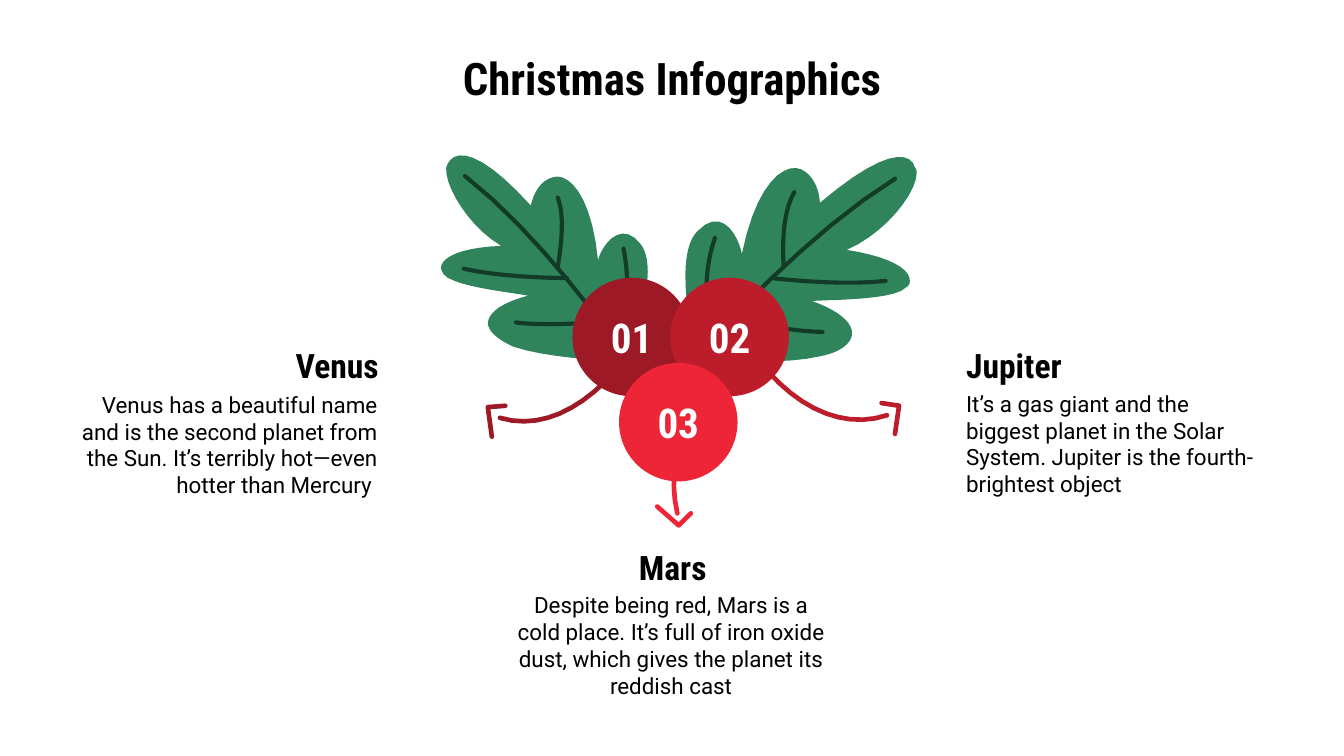
from dataclasses import dataclass

from lxml.etree import SubElement
from pptx import Presentation
from pptx.dml.color import RGBColor
from pptx.enum.shapes import MSO_SHAPE as Preset
from pptx.enum.text import MSO_ANCHOR as Anchor, MSO_AUTO_SIZE as AutoSize, PP_ALIGN as Align
from pptx.oxml.ns import qn
from pptx.util import Cm, Pt

COLORS = {
    "leaf": "2F845C", "vein": "133C28", "text": "000000", "number": "FFFFFF",
    "venus": "9D1926", "jupiter": "BD1D2A", "mars": "EE2537",
}
HEADING_FONT, BODY_FONT = "Roboto Condensed", "Roboto"
CM_PER_INCH = 2.54
BERRY_SIZE = 2.24
CURVE_STEPS = 10

Point = tuple[float, float]
Path = tuple[Point, ...]


@dataclass
class Leaf:
    outline: Path
    veins: tuple[Path, ...]


@dataclass
class Planet:
    name: str
    description: str
    number: str
    color: str
    align: Align
    heading_at: Point
    description_at: Point
    berry_at: Point
    arrow_shaft: Path
    arrow_head: Path


RIGHT_LEAF = Leaf(
    outline=(
        (6.82, 1.29), (6.82, 1.27), (6.82, 1.26), (6.81, 1.25),
        (6.77, 1.11), (6.56, 1.12), (6.1, 1.51),
        (6.1, 1.45), (6.07, 1.31), (5.96, 1.26),
        (5.84, 1.21), (5.63, 1.35), (5.52, 1.89),
        (5.51, 1.81), (5.39, 1.51), (5.19, 1.72),
        (5.12, 1.79), (5.1, 1.92), (5.1, 2.06),
        (5.1, 2.34), (5.18, 2.67), (5.18, 2.67),
        (5.18, 2.67), (5.78, 2.73), (6.11, 2.65),
        (6.26, 2.62), (6.34, 2.55), (6.34, 2.48),
        (6.34, 2.4), (6.24, 2.31), (6.04, 2.24),
        (6.23, 2.23), (6.66, 2.23), (6.74, 2.14),
        (6.76, 2.13), (6.77, 2.11), (6.77, 2.09),
        (6.77, 2), (6.62, 1.91), (6.3, 1.86),
        (6.58, 1.74), (6.82, 1.44), (6.82, 1.29),
    ),
    veins=(
        ((6.66, 1.33), (5.87, 1.82), (5.02, 2.83), (5.02, 2.84)),
        ((5.91, 1.43), (5.83, 1.57), (5.82, 1.78), (5.83, 1.98)),
        ((6.59, 2.09), (6.25, 2.13), (5.75, 2.07), (5.75, 2.07)),
        ((5.32, 1.77), (5.23, 2.03), (5.24, 2.31), (5.33, 2.49)),
        ((6.12, 2.47), (5.9, 2.47), (5.44, 2.38), (5.43, 2.38)),
    ),
)
LEFT_LEAF = Leaf(
    outline=(
        (3.32, 1.25), (3.31, 1.39), (3.49, 1.69), (3.73, 1.83),
        (3.44, 1.84), (3.29, 1.91), (3.28, 1.99),
        (3.28, 2), (3.29, 2.02), (3.3, 2.04),
        (3.37, 2.13), (3.76, 2.17), (3.93, 2.2),
        (3.74, 2.25), (3.64, 2.32), (3.63, 2.4),
        (3.63, 2.46), (3.69, 2.52), (3.82, 2.58),
        (4.12, 2.68), (4.67, 2.69), (4.67, 2.69),
        (4.67, 2.69), (4.79, 2.39), (4.81, 2.14),
        (4.83, 2.01), (4.82, 1.89), (4.77, 1.82),
        (4.61, 1.61), (4.46, 1.86), (4.45, 1.94),
        (4.4, 1.43), (4.22, 1.28), (4.11, 1.32),
        (4, 1.35), (3.96, 1.48), (3.95, 1.53),
        (3.58, 1.12), (3.39, 1.1), (3.33, 1.22),
        (3.33, 1.23), (3.32, 1.24), (3.32, 1.25),
    ),
    veins=(
        ((3.46, 1.31), (4.14, 1.84), (4.79, 2.85), (4.8, 2.86)),
        ((4.15, 1.47), (4.2, 1.6), (4.18, 1.8), (4.15, 1.99)),
        ((3.45, 2), (3.75, 2.07), (4.22, 2.07), (4.22, 2.07)),
        ((4.64, 1.85), (4.69, 2.1), (4.67, 2.3), (4.56, 2.52)),
        ((3.84, 2.4), (4.04, 2.43), (4.47, 2.4), (4.48, 2.39)),
    ),
)
VENUS = Planet(
    "Venus",
    "Venus has a beautiful name and is the second planet from the Sun. "
    "It’s terribly hot—even hotter than Mercury ",
    "01", "venus", Align.RIGHT, (1.65, 6.45), (1.27, 7.54), (10.82, 5.25),
    ((4.58, 2.76), (4.32, 3.05), (4.02, 3.2), (3.72, 3.11)),
    ((3.66, 3.25), (3.63, 3.03), (3.76, 3.02)),
)
JUPITER = Planet(
    "Jupiter",
    "It’s a gas giant and the\n"
    "biggest planet in the Solar System. Jupiter is the fourth-brightest object",
    "02", "jupiter", Align.LEFT, (18.26, 6.45), (18.26, 7.52), (12.67, 5.25),
    ((5.72, 2.77), (5.98, 3.06), (6.3, 3.19), (6.6, 3.09)),
    ((6.66, 3.23), (6.69, 3.02), (6.56, 3)),
)
MARS = Planet(
    "Mars",
    "Despite being red, Mars is a cold place. It’s full of iron oxide dust, "
    "which gives the planet its reddish cast",
    "03", "mars", Align.CENTER, (9.96, 10.26), (9.75, 11.33), (11.7, 6.86),
    ((5.36, 2.94), (5.06, 3.18), (4.96, 3.48), (5.04, 3.82)),
    ((4.89, 3.77), (5.05, 3.91), (5.14, 3.82)),
)
PLANETS = (VENUS, JUPITER, MARS)


def rgb(color: str) -> RGBColor:
    return RGBColor.from_string(COLORS[color])


def flatten(curve: Path) -> list[Point]:
    points = [curve[0]]
    for i in range(0, len(curve) - 1, 3):
        a, b, c, d = curve[i:i + 4]
        for step in range(1, CURVE_STEPS + 1):
            t = step / CURVE_STEPS
            weights = ((1 - t) ** 3, 3 * t * (1 - t) ** 2, 3 * t * t * (1 - t), t ** 3)
            points.append(tuple(
                sum(w * p[axis] for w, p in zip(weights, (a, b, c, d))) for axis in (0, 1)
            ))
    return points


def add_path(slide, points, close: bool):
    start, *rest = [(Cm(x * CM_PER_INCH), Cm(y * CM_PER_INCH)) for x, y in points]
    builder = slide.shapes.build_freeform(*start)
    builder.add_line_segments(rest, close=close)
    path = builder.convert_to_shape()
    path.shadow.inherit = False
    return path


def add_stroke(slide, points, color: str, width: float) -> None:
    stroke = add_path(slide, points, close=False)
    stroke.fill.background()
    stroke.line.color.rgb = rgb(color)
    stroke.line.width = Pt(width)
    outline = stroke.line.fill._xPr
    outline.set("cap", "rnd")
    SubElement(outline, qn("a:round"))


def add_leaf(slide, leaf: Leaf) -> None:
    blade = add_path(slide, flatten(leaf.outline), close=True)
    blade.fill.solid()
    blade.fill.fore_color.rgb = rgb("leaf")
    blade.line.fill.background()
    for vein in leaf.veins:
        add_stroke(slide, flatten(vein), "vein", 2.2)


def add_arrow(slide, planet: Planet) -> None:
    for points in (flatten(planet.arrow_shaft), planet.arrow_head):
        add_stroke(slide, points, planet.color, 2.5)


def write(shape, text: str, size: float, font: str, color: str, align: Align,
          anchor: Anchor, bold: bool = True, margin: float = 0) -> None:
    frame = shape.text_frame
    frame.text = text
    frame.word_wrap = True
    frame.auto_size = AutoSize.NONE
    frame.vertical_anchor = anchor
    frame.margin_left = frame.margin_right = Cm(margin)
    frame.margin_top = frame.margin_bottom = Cm(margin)
    for paragraph in frame.paragraphs:
        paragraph.alignment = align
        for run in paragraph.runs:
            run.font.size, run.font.name, run.font.bold = Pt(size), font, bold
            run.font.color.rgb = rgb(color)


def add_berry(slide, planet: Planet) -> None:
    left, top = planet.berry_at
    berry = slide.shapes.add_shape(
        Preset.OVAL, Cm(left), Cm(top), Cm(BERRY_SIZE), Cm(BERRY_SIZE))
    berry.shadow.inherit = False
    berry.fill.solid()
    berry.fill.fore_color.rgb = rgb(planet.color)
    berry.line.fill.background()
    write(berry, planet.number, 22, HEADING_FONT, "number", Align.CENTER, Anchor.MIDDLE)


def add_caption(slide, planet: Planet) -> None:
    left, top = planet.heading_at
    heading = slide.shapes.add_textbox(Cm(left), Cm(top), Cm(5.51), Cm(0.91))
    write(heading, planet.name, 18, HEADING_FONT, "text", planet.align, Anchor.MIDDLE)
    left, top = planet.description_at
    description = slide.shapes.add_textbox(Cm(left), Cm(top), Cm(5.87), Cm(1.88))
    write(description, planet.description, 12, BODY_FONT, "text", planet.align,
          Anchor.BOTTOM, bold=False)


def main() -> None:
    deck = Presentation()
    deck.slide_width, deck.slide_height = Cm(25.4), Cm(14.29)
    slide = deck.slides.add_slide(deck.slide_layouts[5])
    title = slide.shapes.title
    title.left, title.top, title.width, title.height = Cm(1.27), Cm(1.14), Cm(22.86), Cm(1.09)
    write(title, "Christmas Infographics", 24, HEADING_FONT, "text", Align.CENTER,
          Anchor.BOTTOM, margin=0.25)

    add_arrow(slide, MARS)
    for leaf in (RIGHT_LEAF, LEFT_LEAF):
        add_leaf(slide, leaf)
    for planet in PLANETS:
        add_berry(slide, planet)
    for planet in PLANETS:
        add_caption(slide, planet)
    for planet in (VENUS, JUPITER):
        add_arrow(slide, planet)
    deck.save("out.pptx")


if __name__ == "__main__":
    main()
